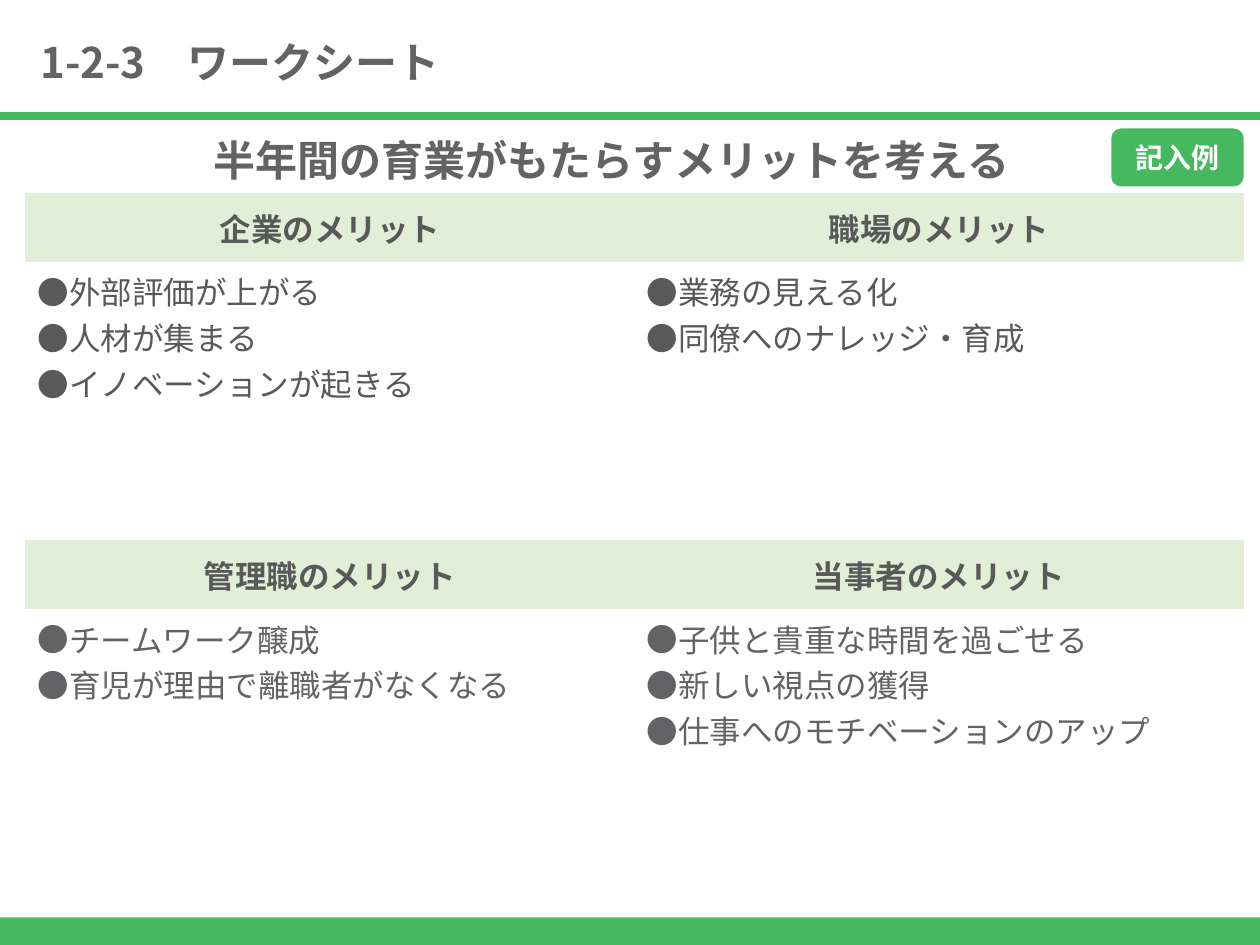
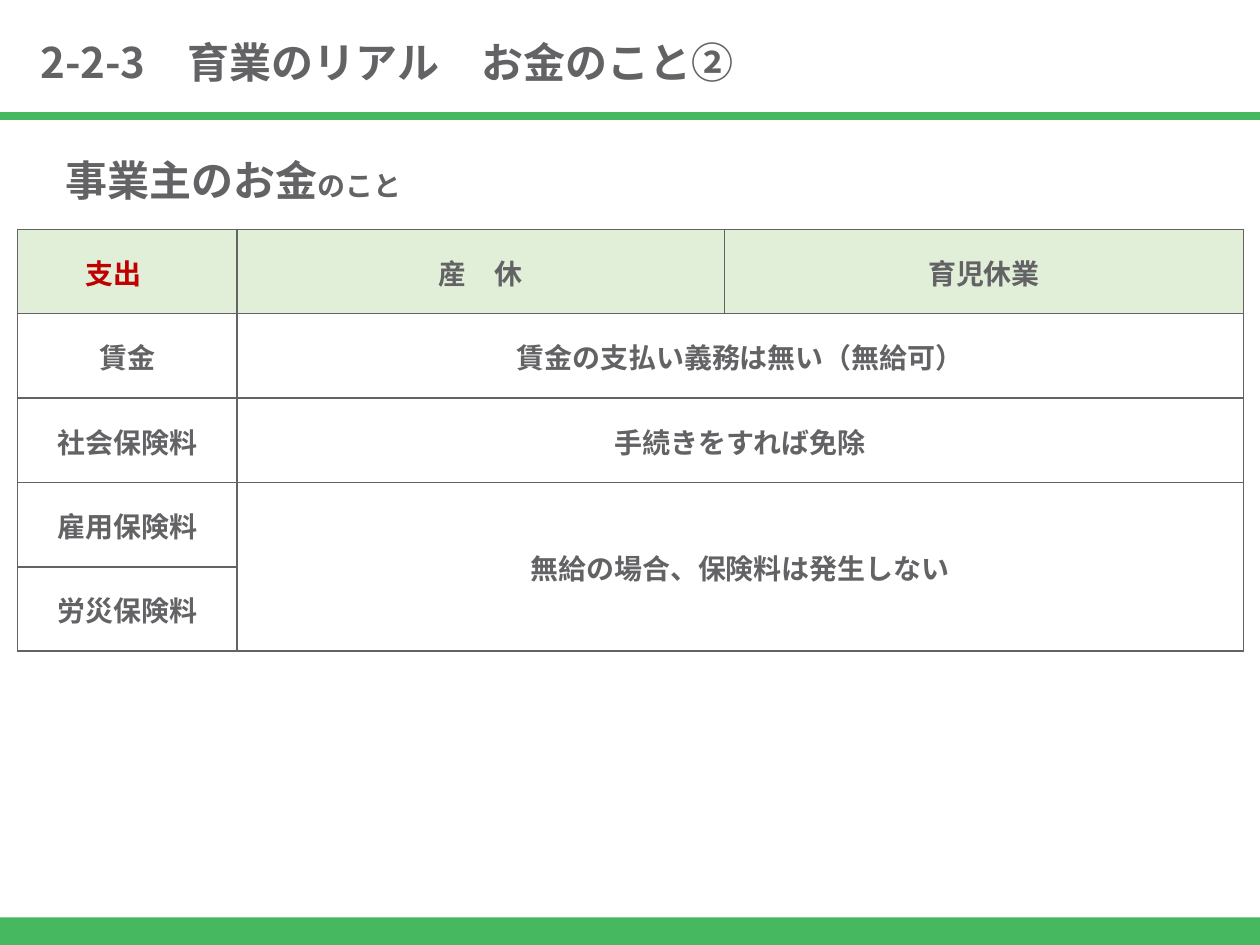
from lxml.etree import SubElement
from pptx import Presentation
from pptx.dml.color import RGBColor
from pptx.enum.shapes import MSO_CONNECTOR as Connector, MSO_SHAPE as Shape
from pptx.enum.text import MSO_ANCHOR as Anchor, MSO_AUTO_SIZE as AutoSize, PP_ALIGN as Align
from pptx.oxml import parse_xml
from pptx.oxml.ns import nsdecls, qn
from pptx.util import Inches, Pt

FONT = "Noto Sans CJK JP"
COLORS = {
    "green": "46B85F",
    "pale": "E1EFD8",
    "text": "636366",
    "dark": "595959",
    "red": "C00000",
    "white": "FFFFFF",
}
PLAIN_TABLE = "{2D5ABB26-0587-4C30-8999-92F81FD0307C}"
BULLET_INDENT = Inches(0.25)
TITLE_ONLY = 5

MERITS = [
    [("企業のメリット", ["外部評価が上がる", "人材が集まる", "イノベーションが起きる"]),
     ("職場のメリット", ["業務の見える化", "同僚へのナレッジ・育成"])],
    [("管理職のメリット", ["チームワーク醸成", "育児が理由で離職者がなくなる"]),
     ("当事者のメリット", ["子供と貴重な時間を過ごせる", "新しい視点の獲得",
                   "仕事へのモチベーションのアップ"])],
]
EXPENSES = [
    ["支出　", "産　休", "育児休業"],
    ["賃金", "賃金の支払い義務は無い（無給可）", None],
    ["社会保険料", "手続きをすれば免除", None],
    ["雇用保険料", "無給の場合、保険料は発生しない", None],
    ["労災保険料", None, None],
]
EXPENSE_MERGES = [((1, 1), (1, 2)), ((2, 1), (2, 2)), ((3, 1), (4, 2))]


def rgb(color):
    return RGBColor.from_string(COLORS[color])


def inches(box):
    return [Inches(length) for length in box]


def add_bullet(paragraph):
    properties = paragraph._p.get_or_add_pPr()
    properties.set("marL", str(BULLET_INDENT))
    properties.set("indent", str(-BULLET_INDENT))
    SubElement(properties, qn("a:buFont")).set("typeface", FONT)
    SubElement(properties, qn("a:buChar")).set("char", "●")


def write(frame, lines, size=24, color="text", bold=True, align=Align.LEFT, bullets=False):
    for index, line in enumerate(lines):
        paragraph = frame.paragraphs[0] if index == 0 else frame.add_paragraph()
        if bullets:
            add_bullet(paragraph)
        paragraph.alignment = align
        parts = [(line, size)] if isinstance(line, str) else line
        for text, part_size in parts:
            run = paragraph.add_run()
            run.text = text
            run.font.size = Pt(part_size)
            run.font.bold = bold
            run.font.color.rgb = rgb(color)
            run.font.name = FONT
            SubElement(run._r.get_or_add_rPr(), qn("a:ea")).set("typeface", FONT)


def fit_frame(frame):
    frame.word_wrap = True
    frame.auto_size = AutoSize.NONE
    frame.vertical_anchor = Anchor.MIDDLE


def add_heading(slide, box, line, **text_format):
    frame = slide.shapes.add_textbox(*inches(box)).text_frame
    fit_frame(frame)
    write(frame, [line], **text_format)


def add_filled(slide, kind, box):
    shape = slide.shapes.add_shape(kind, *inches(box))
    shape.shadow.inherit = False
    shape.fill.solid()
    shape.fill.fore_color.rgb = rgb("green")
    shape.line.fill.background()
    return shape


def start_slide(deck, title_text):
    slide = deck.slides.add_slide(deck.slide_layouts[TITLE_ONLY])
    add_filled(slide, Shape.RECTANGLE, (0, 7.28, 10, 0.22))
    rule = slide.shapes.add_connector(Connector.STRAIGHT, *inches((0, 0.92, 10, 0.92)))
    rule.line.color.rgb = rgb("green")
    rule.line.width = Pt(4.5)
    SubElement(rule._element.spPr, qn("a:effectLst"))
    title = slide.shapes.title
    title.left, title.top, title.width, title.height = inches((0.22, 0.24, 9.5, 0.5))
    fit_frame(title.text_frame)
    write(title.text_frame, [title_text])
    return slide


def add_plain_table(slide, left, top, widths, heights):
    box = (left, top, sum(widths), sum(heights))
    table = slide.shapes.add_table(len(heights), len(widths), *inches(box)).table
    table.first_row = table.horz_banding = False
    table._tbl.tblPr.find(qn("a:tableStyleId")).text = PLAIN_TABLE
    for column, width in zip(table.columns, widths):
        column.width = Inches(width)
    for row, height in zip(table.rows, heights):
        row.height = Inches(height)
    return table


def fill_cell(cell, color):
    cell.fill.solid()
    cell.fill.fore_color.rgb = rgb(color)


def add_borders(cell):
    properties = cell._tc.get_or_add_tcPr()
    for index, side in enumerate("LRTB"):
        properties.insert(index, parse_xml(
            f'<a:ln{side} {nsdecls("a")} w="{Pt(1)}"><a:solidFill>'
            f'<a:srgbClr val="{COLORS["text"]}"/></a:solidFill></a:ln{side}>'))


def add_merit_grid(slide, left, top, width, height):
    header_height = 0.55
    list_height = height / 2 - header_height
    table = add_plain_table(slide, left, top, [width / 2] * 2, [header_height, list_height] * 2)
    for band, (merits, list_color) in enumerate(zip(MERITS, ("dark", "text"))):
        for column, (heading, points) in enumerate(merits):
            header = table.cell(band * 2, column)
            header.vertical_anchor = Anchor.MIDDLE
            fill_cell(header, "pale")
            write(header.text_frame, [heading], size=18, color="dark", align=Align.CENTER)
            body = table.cell(band * 2 + 1, column)
            fill_cell(body, "white")
            write(body.text_frame, points, size=18, color=list_color, bold=False, bullets=True)


def add_expense_table(slide, left, top, widths, row_height):
    table = add_plain_table(slide, left, top, widths, [row_height] * len(EXPENSES))
    for start, end in EXPENSE_MERGES:
        table.cell(*start).merge(table.cell(*end))
    for row, texts in enumerate(EXPENSES):
        for column, text in enumerate(texts):
            cell = table.cell(row, column)
            cell.vertical_anchor = Anchor.MIDDLE
            cell.margin_left = cell.margin_right = cell.margin_top = Inches(0.01)
            cell.margin_bottom = 0
            fill_cell(cell, "pale" if row == 0 else "white")
            add_borders(cell)
            if text:
                color = "red" if row == column == 0 else "text"
                write(cell.text_frame, [text], size=16, color=color, align=Align.CENTER)


def add_example_badge(slide, box):
    badge = add_filled(slide, Shape.ROUNDED_RECTANGLE, box)
    fit_frame(badge.text_frame)
    write(badge.text_frame, ["記入例"], size=16, color="white", align=Align.CENTER)


def build_worksheet(deck):
    slide = start_slide(deck, "1-2-3　ワークシート")
    add_merit_grid(slide, 0.2, 1.53, 9.67, 5.51)
    add_heading(slide, (0.2, 1.02, 9.3, 0.5), "半年間の育業がもたらすメリットを考える",
                align=Align.CENTER)
    add_example_badge(slide, (8.82, 1.02, 1.05, 0.46))


def build_employer_costs(deck):
    slide = start_slide(deck, "2-2-3　育業のリアル　お金のこと②")
    add_heading(slide, (0.42, 1.18, 5.83, 0.5), [("事業主のお金", 24), ("のこと", 16)])
    add_expense_table(slide, 0.14, 1.82, [1.74, 3.87, 4.12], 0.67)


def main():
    deck = Presentation()
    deck.slide_width, deck.slide_height = inches((10, 7.5))
    build_worksheet(deck)
    build_employer_costs(deck)
    deck.save("out.pptx")


if __name__ == "__main__":
    main()
